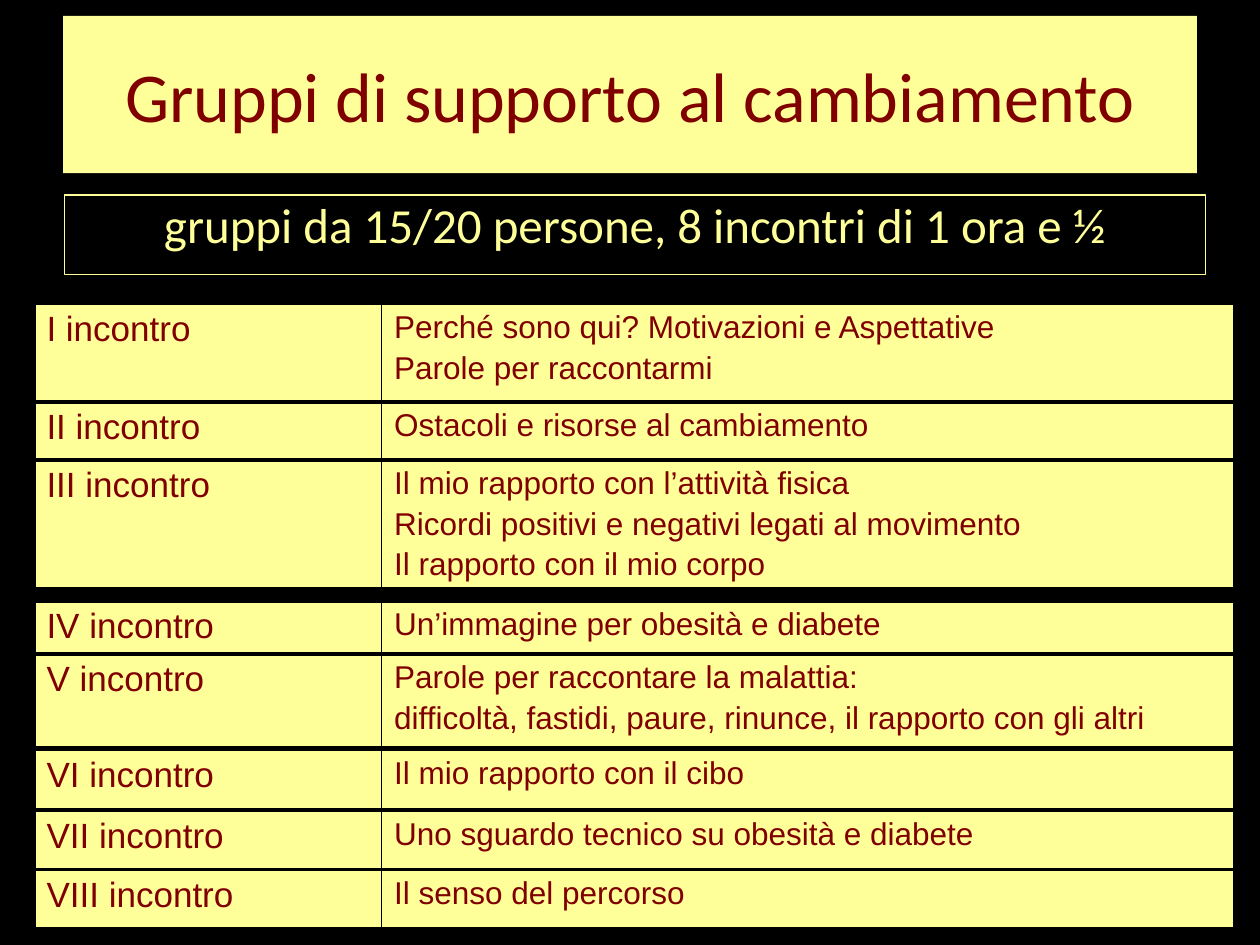
"""Build the slide on support groups for change."""
import pptx
import pptx.dml.color
import pptx.enum.text
import pptx.util
from lxml import etree

Pt = pptx.util.Pt
Align = pptx.enum.text.PP_ALIGN
Anchor = pptx.enum.text.MSO_ANCHOR

HUES = {"back": "000000", "pale": "FFFF99", "dark": "800000"}
TITLE = "Gruppi di supporto al cambiamento"
GROUPS = "gruppi da 15/20 persone, 8 incontri di 1 ora e ½"
# top, row height, frame height, name, topics, justified
MEETINGS = [
    (173.5, 57, 57, "I incontro",
     ["Perché sono qui? Motivazioni e Aspettative", "Parole per raccontarmi"], False),
    (229.7, 34.5, 34.5, "II incontro", ["Ostacoli e risorse al cambiamento"], False),
    (262.8, 57, 80.6, "III incontro",
     ["Il mio rapporto con l’attività fisica",
      "Ricordi positivi e negativi legati al movimento",
      "Il rapporto con il mio corpo"], False),
    (343.4, 34.5, 34.5, "IV incontro", ["Un’immagine per obesità e diabete"], True),
    (373.7, 53.3, 54.7, "V incontro",
     ["Parole per raccontare la malattia:",
      "difficoltà, fastidi, paure, rinunce, il rapporto con gli altri"], False),
    (428.4, 34.5, 34.5, "VI incontro", ["Il mio rapporto con il cibo"], False),
    (463, 34.5, 34.5, "VII incontro", ["Uno sguardo tecnico su obesità e diabete"], True),
    (496.8, 34, 34, "VIII incontro", ["Il senso del percorso"], False),
]
LEFT, COLS = 19.4, (198.7, 487.4)
EDGES = [{"L": 2.25, "R": 1, "T": 2.25, "B": 2.25},
         {"L": 1, "R": 2.25, "T": 2.25, "B": 2.25}]


def rgb(name):
    """Return a named colour."""
    return pptx.dml.color.RGBColor.from_string(HUES[name])


def paint(fill, name):
    """Make a fill solid in a named colour."""
    fill.solid()
    fill.fore_color.rgb = rgb(name)


def style(para, size, face, hue, gap, align=None):
    """Format one paragraph."""
    para.font.size, para.font.name = Pt(size), face
    para.font.color.rgb = rgb(hue)
    para.space_before = Pt(gap)
    para.alignment = align


def place(shape, left, top, width, height):
    """Set the position and size of a shape."""
    shape.left, shape.top = Pt(left), Pt(top)
    shape.width, shape.height = Pt(width), Pt(height)


def add(node, tag, **attrs):
    """Append a drawing element to a node."""
    space = "{http://schemas.openxmlformats.org/drawingml/2006/main}"
    return etree.SubElement(node, space + tag, attrs)


def fill_cell(cell, lines, size, edges, align):
    """Write, fill and border one cell."""
    cell.text = "\n".join(lines)
    for para in cell.text_frame.paragraphs:
        style(para, size, "Arial", "dark", 0 if align else size / 6, align)
    props = cell._tc.get_or_add_tcPr()
    for side, width in edges.items():
        line = add(props, "ln" + side, w=str(Pt(width)))
        add(add(line, "solidFill"), "srgbClr", val=HUES["back"])
    paint(cell.fill, "pale")


def add_meeting(slide, top, row, height, name, topics, just):
    """Add the one-row table of a meeting."""
    frame = slide.shapes.add_table(1, 2, Pt(LEFT), Pt(top), Pt(sum(COLS)), Pt(row))
    table = frame.table
    table.first_row = table.horz_banding = False
    for col, width in zip(table.columns, COLS):
        col.width = Pt(width)
    frame.height = Pt(height)
    fill_cell(table.cell(0, 0), [name], 20, EDGES[0], None)
    fill_cell(table.cell(0, 1), topics, 18, EDGES[1], Align.JUSTIFY if just else None)


def main():
    """Build and save the slide."""
    deck = pptx.Presentation()
    deck.slide_width, deck.slide_height = Pt(720), Pt(540)
    slide = deck.slides.add_slide(deck.slide_layouts[1])
    paint(slide.background.fill, "back")

    title, body = slide.placeholders
    place(title, 36, 9, 648, 90)
    paint(title.fill, "pale")
    title.text = TITLE
    title.text_frame.vertical_anchor = Anchor.MIDDLE
    style(title.text_frame.paragraphs[0], 40, "Calibri", "dark", 20, Align.CENTER)

    place(body, 36.8, 111.4, 652, 45.6)
    paint(body.line.fill, "pale")
    body.line.width = Pt(0.75)
    body.text = GROUPS
    para = body.text_frame.paragraphs[0]
    style(para, 28, "Calibri", "pale", 5.6, Align.CENTER)
    para.line_spacing = 0.9
    props = para._p.get_or_add_pPr()
    props.set("marL", str(Pt(27)))
    props.set("indent", str(Pt(-27)))
    props.insert(2, add(props, "buNone"))

    for meeting in MEETINGS:
        add_meeting(slide, *meeting)
    deck.save("out.pptx")


if __name__ == "__main__":
    main()
